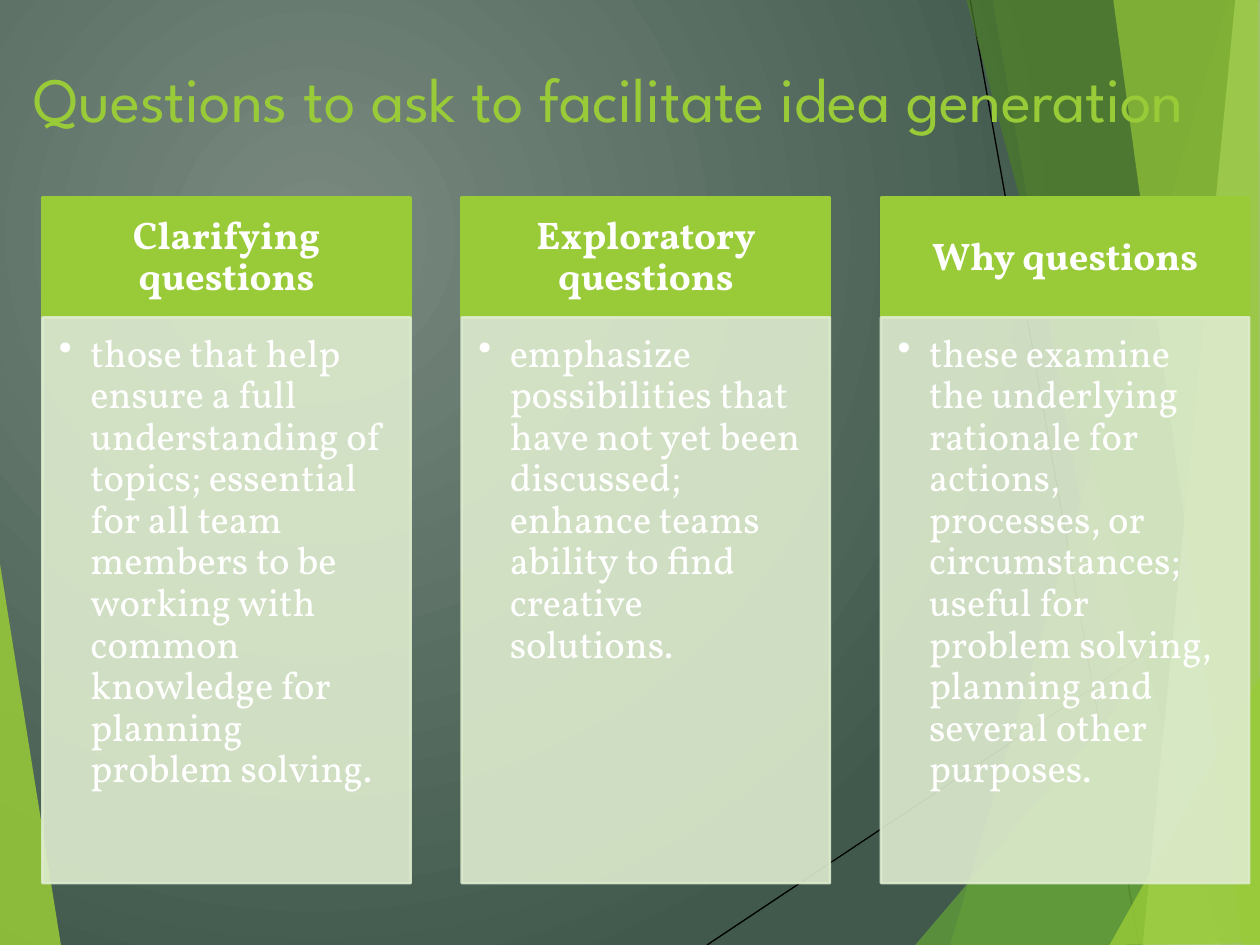
from lxml.etree import SubElement
from pptx import Presentation
from pptx.dml.color import RGBColor
from pptx.enum.shapes import MSO_CONNECTOR, MSO_SHAPE
from pptx.enum.text import MSO_ANCHOR, PP_ALIGN
from pptx.oxml.ns import qn
from pptx.util import Pt

COLORS = {
    "lime": "99CB38", "green": "63A537", "forest": "4A7C29", "pale": "C2E088",
    "panel": "DEECCE", "white": "FFFFFF", "black": "000000",
    "glow": "798980", "slate": "40594C",
}
TITLE_FONT, BODY_FONT = "League Spartan", "Vollkorn"

# Facets behind the content: color, opacity in percent, corner points
LEFT_FACET = ("lime", 85, [(-0.7, 316), (35.3, 540.7), (-0.7, 540)])
RIGHT_FACETS = [
    ("lime", 30, [(702, 0), (543, 540), (721, 540.7), (720.7, 0.7)]),
    ("lime", 20, [(567.4, -0.7), (661.7, 540), (720.7, 540), (720.7, -0.7)]),
    ("green", 72, [(522.7, 540), (720, 309), (720.7, 540)]),
    ("forest", 70, [(552.2, -0.7), (698.4, 540), (720.7, 539.3), (720.7, -0.7)]),
    ("pale", 70, [(706.3, -0.7), (653, 540), (720.7, 540), (720, -0.7)]),
    ("lime", 65, [(635.8, -0.7), (709.9, 540), (720, 540), (718.6, -0.7)]),
    ("lime", 80, [(634.3, 540), (720.7, 385.2), (720.7, 539.3)]),
]
LINES = [((404, 540), (720.7, 329)), ((554.4, 0), (650.9, 540))]

QUESTIONS = [
    ("Clarifying questions",
     "those that help ensure a full understanding of topics; essential for all team "
     "members to be working with common knowledge for planning problem solving."),
    ("Exploratory questions",
     "emphasize possibilities that have not yet been discussed; enhance teams ability "
     "to find creative solutions."),
    ("Why questions",
     "these examine the underlying rationale for actions, processes, or circumstances; "
     "useful for problem solving, planning and several other purposes."),
]
COLUMN_LEFT, COLUMN_STEP, COLUMN_WIDTH = 24.3, 239.6, 210.4
HEADER_TOP, HEADER_HEIGHT, PANEL_HEIGHT = 113, 68.4, 323.3


class SlideBuilder:
    def __init__(self, slide):
        self.slide = slide
        self.shapes = slide.shapes

    def paint(self, target, color, opacity=100):
        """Give a fill or a line a solid color."""
        target.solid()
        target.fore_color.rgb = RGBColor.from_string(COLORS[color])
        if opacity < 100:
            # Transparency is a child of the color element
            for element in target._xPr.findall(qn("a:solidFill") + "/" + qn("a:srgbClr")):
                SubElement(element, qn("a:alpha"), val=str(opacity * 1000))

    def background(self, center, edge):
        fill = self.slide.background.fill
        fill.gradient()
        for stop, color, position in zip(fill.gradient_stops, (center, edge), (0, 1)):
            stop.color.rgb = RGBColor.from_string(COLORS[color])
            stop.position = position
        gradient = next(self.slide.element.iter(qn("a:gradFill")))
        gradient.remove(gradient.find(qn("a:lin")))
        circle = SubElement(gradient, qn("a:path"))
        circle.set("path", "circle")
        SubElement(circle, qn("a:fillToRect"), l="50000", t="50000", r="100000", b="100000")

    def facet(self, color, opacity, points):
        builder = self.shapes.build_freeform(*points[0], scale=Pt(1))
        builder.add_line_segments(points[1:], close=True)
        shape = builder.convert_to_shape()
        shape.shadow.inherit = False
        self.paint(shape.fill, color, opacity)
        shape.line.fill.background()

    def line(self, start, end):
        connector = self.shapes.add_connector(
            MSO_CONNECTOR.STRAIGHT, *(Pt(value) for value in start + end))
        self.paint(connector.line.fill, "black")
        connector.line.width = Pt(0.75)
        SubElement(connector.element.spPr, qn("a:effectLst"))

    def set_text(self, shape, text, font, size, color, margins, anchor, align, bold=False):
        frame = shape.text_frame
        frame.text = text
        frame.word_wrap = True
        frame.vertical_anchor = anchor
        (frame.margin_left, frame.margin_top,
         frame.margin_right, frame.margin_bottom) = (Pt(value) for value in margins)
        paragraph = frame.paragraphs[0]
        paragraph.alignment = align
        style = paragraph.runs[0].font
        style.name, style.size, style.bold = font, Pt(size), bold
        style.color.rgb = RGBColor.from_string(COLORS[color])
        return paragraph

    def title(self, text, left, top, width, height):
        shape = self.shapes.title
        shape.left, shape.top, shape.width, shape.height = map(Pt, (left, top, width, height))
        self.set_text(shape, text, TITLE_FONT, 36, "lime", (7.2, 3.6, 7.2, 3.6),
                      MSO_ANCHOR.MIDDLE, PP_ALIGN.LEFT)
        # Bring the title in front of the facets
        self.shapes.element.append(shape.element)

    def box(self, left, top, height, color, opacity=100):
        shape = self.shapes.add_shape(
            MSO_SHAPE.RECTANGLE, Pt(left), Pt(top), Pt(COLUMN_WIDTH), Pt(height))
        shape.shadow.inherit = False
        self.paint(shape.fill, color, opacity)
        self.paint(shape.line.fill, color, opacity)
        shape.line.width = Pt(1.5)
        return shape

    def header(self, text, left):
        shape = self.box(left, HEADER_TOP, HEADER_HEIGHT, "lime")
        paragraph = self.set_text(shape, text, BODY_FONT, 22, "white", (12.3, 7, 12.3, 7),
                                  MSO_ANCHOR.MIDDLE, PP_ALIGN.CENTER, bold=True)
        paragraph.line_spacing = 0.9

    def panel(self, text, left):
        shape = self.box(left, HEADER_TOP + HEADER_HEIGHT, PANEL_HEIGHT, "panel", 90)
        paragraph = self.set_text(shape, text, BODY_FONT, 22, "white", (9.4, 9.4, 12.3, 13.9),
                                  MSO_ANCHOR.TOP, PP_ALIGN.LEFT)
        paragraph.level = 1
        paragraph.line_spacing = 0.9
        properties = paragraph._p.get_or_add_pPr()
        properties.set("marL", str(Pt(18)))
        properties.set("indent", str(Pt(-18)))
        SubElement(properties, qn("a:buChar"), char="•")


def main():
    presentation = Presentation()
    presentation.slide_width, presentation.slide_height = Pt(720), Pt(540)
    slide = presentation.slides.add_slide(presentation.slide_layouts[5])
    builder = SlideBuilder(slide)

    # Backdrop
    builder.background("glow", "slate")
    builder.facet(*LEFT_FACET)
    for start, end in LINES:
        builder.line(start, end)
    for facet in RIGHT_FACETS:
        builder.facet(*facet)

    # Title
    builder.title("Questions to ask to facilitate idea generation", 12.2, 21.6, 690, 68.4)

    # Question columns
    for index, (heading, description) in enumerate(QUESTIONS):
        left = COLUMN_LEFT + index * COLUMN_STEP
        builder.header(heading, left)
        builder.panel(description, left)

    presentation.save("out.pptx")


if __name__ == "__main__":
    main()
